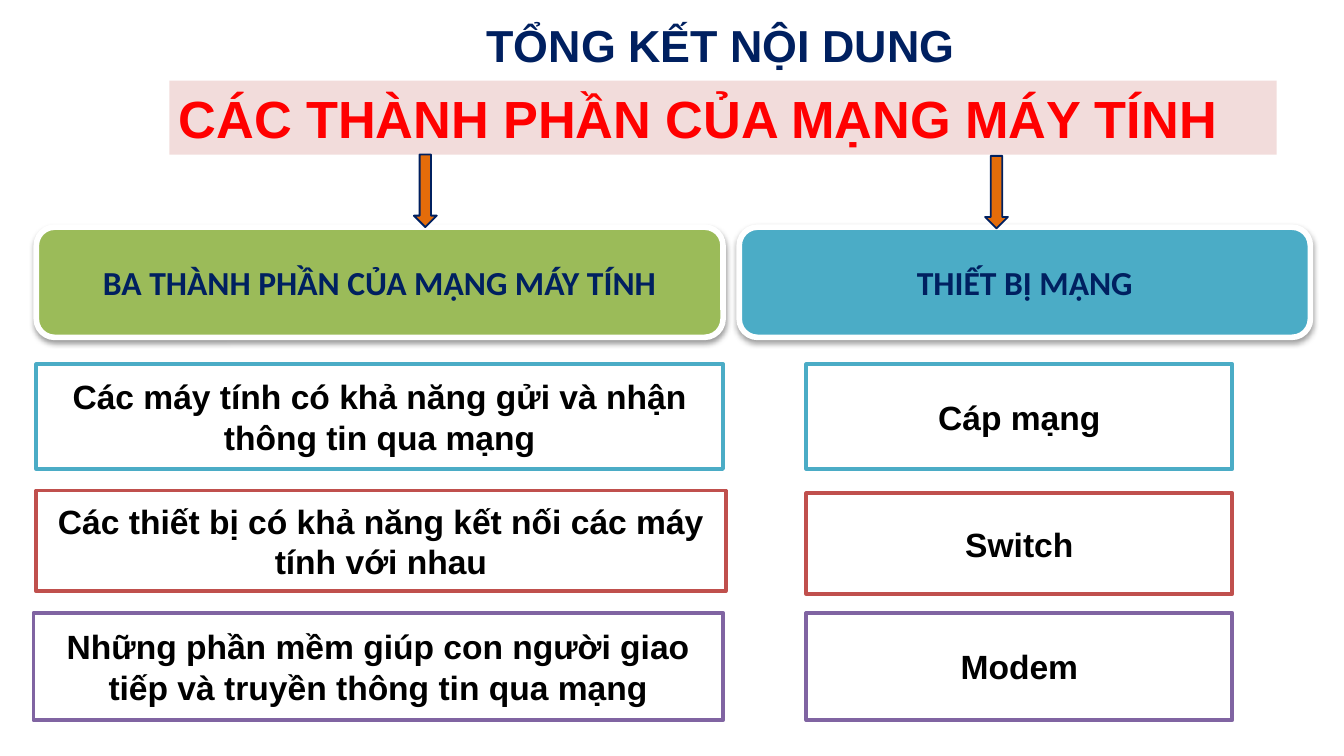
from lxml import etree
from pptx import Presentation
from pptx.dml.color import RGBColor
from pptx.enum.shapes import MSO_SHAPE as Shape
from pptx.enum.text import MSO_ANCHOR as Anchor, MSO_AUTO_SIZE as AutoSize, PP_ALIGN as Align
from pptx.oxml.ns import qn
from pptx.util import Inches, Pt

COLORS = {
    "white": "FFFFFF", "black": "000000", "navy": "002060", "red": "FF0000",
    "pink": "F2DCDB", "orange": "E46C0A", "green": "9BBB59",
    "teal": "4BACC6", "brick": "C0504D", "purple": "8064A2",
}

HEADER_TOP, HEADER_HEIGHT = 1.69, 0.82
ARROW_WIDTH, ARROW_HEIGHT = 0.17, 0.54

# Height and outline of each row of items
ROWS = [(0.78, "teal"), (0.75, "brick"), (0.8, "purple")]

# Heading, fill, header (left, width), arrow (left, top), items (text, left, top, width)
COLUMNS = [
    ("BA THÀNH PHẦN CỦA MẠNG MÁY TÍNH", "green", (0.27, 5.11), (3.08, 1.15), [
        ("Các máy tính có khả năng gửi và nhận thông tin qua mạng", 0.27, 2.71, 5.11),
        ("Các thiết bị có khả năng kết nối các máy tính với nhau", 0.27, 3.65, 5.13),
        ("Những phần mềm giúp con người giao tiếp và truyền thông tin qua mạng",
         0.25, 4.56, 5.13),
    ]),
    ("THIẾT BỊ MẠNG", "teal", (5.5, 4.25), (7.33, 1.16), [
        ("Cáp mạng", 6, 2.71, 3.17),
        ("Switch", 6, 3.67, 3.17),
        ("Modem", 6, 4.56, 3.17),
    ]),
]


def color(name):
    return RGBColor.from_string(COLORS[name])


def write_text(shape, text, size, font_color, font="Arial", align=Align.CENTER,
               anchor=Anchor.MIDDLE, wrap=True):
    frame = shape.text_frame
    frame.text = text
    frame.word_wrap = wrap
    frame.vertical_anchor = anchor
    paragraph = frame.paragraphs[0]
    paragraph.alignment = align
    run_font = paragraph.runs[0].font
    run_font.name, run_font.size, run_font.bold = font, Pt(size), True
    run_font.color.rgb = color(font_color)


def set_margins(frame, horizontal, vertical):
    frame.margin_left = frame.margin_right = Inches(horizontal)
    frame.margin_top = frame.margin_bottom = Inches(vertical)


def add_block(slide, kind, box, fill, line=None, line_width=0):
    shape = slide.shapes.add_shape(kind, *map(Inches, box))
    shape.shadow.inherit = False
    shape.fill.solid()
    shape.fill.fore_color.rgb = color(fill)
    if line:
        shape.line.color.rgb = color(line)
        shape.line.width = Pt(line_width)
    else:
        shape.line.fill.background()
    return shape


def add_soft_shadow(shape):
    effects = shape._element.spPr.find(qn("a:effectLst"))
    shadow = etree.SubElement(effects, qn("a:outerShdw"), blurRad=str(Pt(3.1)),
                              dist=str(Pt(1.6)), dir="5400000", rotWithShape="0")
    tone = etree.SubElement(shadow, qn("a:srgbClr"), val=COLORS["black"])
    etree.SubElement(tone, qn("a:alpha"), val="38000")


def format_title(slide):
    title = slide.shapes.title
    title.left, title.top, title.width, title.height = map(Inches, (3.52, 0.08, 3.72, 0.5))
    write_text(title, "TỔNG KẾT NỘI DUNG", 24, "navy", align=Align.LEFT,
               anchor=Anchor.TOP, wrap=False)
    title.text_frame.auto_size = AutoSize.SHAPE_TO_FIT_TEXT


def add_banner(slide):
    banner = add_block(slide, Shape.RECTANGLE, (1.26, 0.6, 8.24, 0.55), "pink")
    write_text(banner, "CÁC THÀNH PHẦN CỦA MẠNG MÁY TÍNH", 28, "red",
               align=Align.LEFT, anchor=Anchor.TOP)
    set_margins(banner.text_frame, 0.07, 0.04)
    banner.text_frame.auto_size = AutoSize.SHAPE_TO_FIT_TEXT


def add_header(slide, text, fill, left, width):
    header = add_block(slide, Shape.ROUNDED_RECTANGLE,
                       (left, HEADER_TOP, width, HEADER_HEIGHT), fill, "white", 3)
    add_soft_shadow(header)
    write_text(header, text, 18, "navy", font="Calibri")


def add_arrow(slide, left, top):
    add_block(slide, Shape.DOWN_ARROW, (left, top, ARROW_WIDTH, ARROW_HEIGHT),
              "orange", "navy", 1)


def add_item(slide, text, box, line):
    item = add_block(slide, Shape.RECTANGLE, box, "white", line, 2)
    write_text(item, text, 18, "black")
    set_margins(item.text_frame, 0.1, 0.1)


def main():
    presentation = Presentation()
    presentation.slide_width = Inches(10)
    presentation.slide_height = presentation.slide_width * 9 // 16
    slide = presentation.slides.add_slide(presentation.slide_layouts[5])
    format_title(slide)
    add_banner(slide)
    for heading, fill, header_span, arrow_position, items in COLUMNS:
        add_header(slide, heading, fill, *header_span)
        add_arrow(slide, *arrow_position)
        for (height, line), (text, left, top, width) in zip(ROWS, items):
            add_item(slide, text, (left, top, width, height), line)
    presentation.save("out.pptx")


if __name__ == "__main__":
    main()
